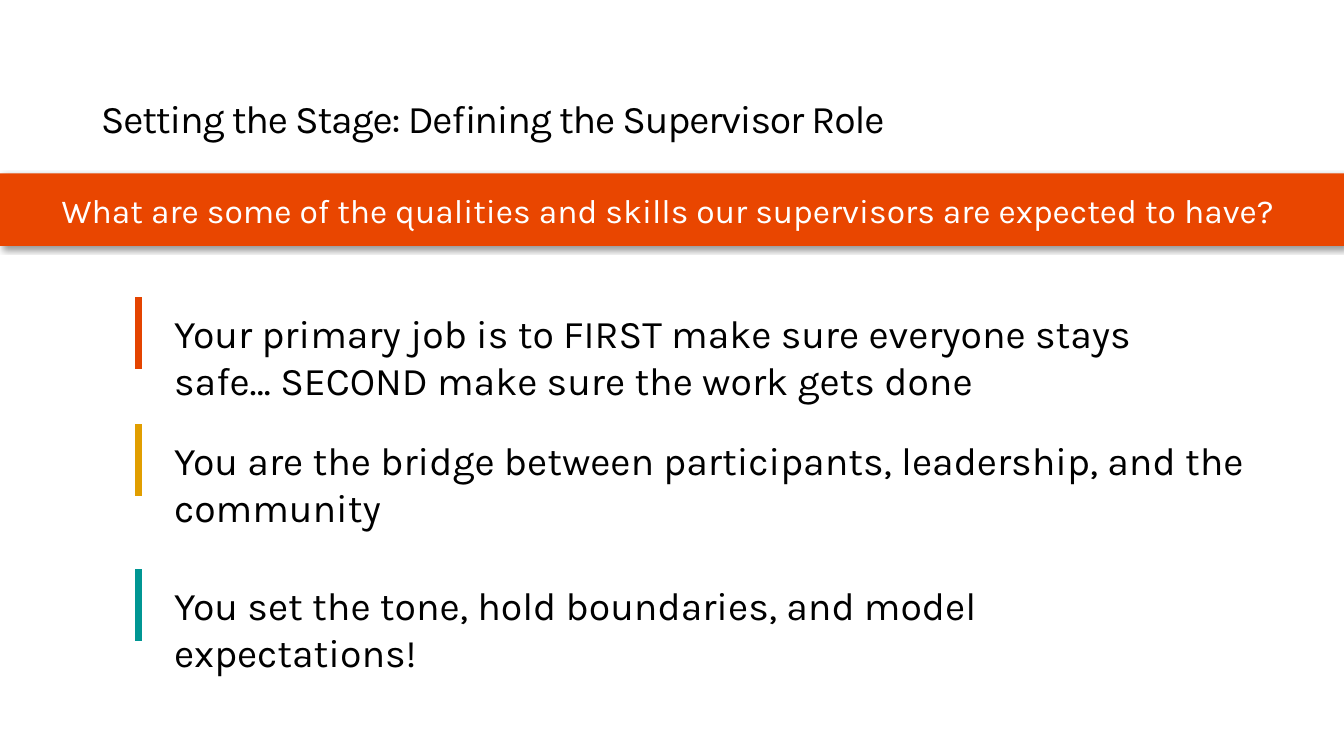
from lxml.etree import SubElement
from pptx import Presentation
from pptx.dml.color import RGBColor
from pptx.enum.shapes import MSO_CONNECTOR, MSO_SHAPE
from pptx.enum.text import MSO_ANCHOR, MSO_AUTO_SIZE, PP_ALIGN
from pptx.oxml.ns import qn
from pptx.util import Cm, Pt

COLORS = {
    "text": "000000",
    "shadow": "000000",
    "white": "FFFFFF",
    "banner": "E94600",
    "safety": "E44400",
    "bridge": "E19E00",
    "tone": "009693",
}
FONT = "Karla"
SLIDE_WIDTH, SLIDE_HEIGHT = Cm(33.87), Cm(19.05)
POINT_LEFT = Cm(3.5)
POINTS = [
    ("Your primary job is to FIRST make sure everyone stays safe… SECOND make sure the work gets done",
     "safety", Cm(7.49), Cm(26.14)),
    ("You are the bridge between participants, leadership, and the community",
     "bridge", Cm(10.69), Cm(28.71)),
    ("You set the tone, hold boundaries, and model expectations!",
     "tone", Cm(14.35), Cm(26.85)),
]


def color(name):
    return RGBColor.from_string(COLORS[name])


def write(frame, words, size, ink, align=PP_ALIGN.LEFT):
    frame.word_wrap = True
    line = frame.paragraphs[0]
    line.text = words
    line.alignment = align
    line.font.name = FONT
    line.font.size = Pt(size)
    line.font.color.rgb = color(ink)
    return line


def add_heading(slide, left, top, width, height):
    heading = slide.shapes.title
    heading.left, heading.top, heading.width, heading.height = left, top, width, height
    frame = heading.text_frame
    frame.auto_size = MSO_AUTO_SIZE.NONE
    frame.vertical_anchor = MSO_ANCHOR.BOTTOM
    frame.margin_left = frame.margin_right = frame.margin_bottom = 0
    frame.margin_top = Cm(0.13)
    line = write(frame, "Setting the Stage: Defining the Supervisor Role", 28, "text")
    line.line_spacing = 0.9
    line.runs[0]._r.get_or_add_rPr().set("spc", "-80")


def add_question_banner(slide, left, top, width, height):
    banner = slide.shapes.add_shape(MSO_SHAPE.RECTANGLE, left, top, width, height)
    banner.fill.solid()
    banner.fill.fore_color.rgb = color("banner")
    banner.line.fill.background()
    banner.shadow.inherit = False
    effects = banner._element.spPr.find(qn("a:effectLst"))
    shadow = SubElement(effects, qn("a:outerShdw"), blurRad=str(Pt(4)), dist=str(Pt(3)),
                        dir=str(45 * 60000), algn="tl", rotWithShape="0")
    tint = SubElement(shadow, qn("a:srgbClr"), val=COLORS["shadow"])
    SubElement(tint, qn("a:alpha"), val="40000")
    banner.text_frame.vertical_anchor = MSO_ANCHOR.MIDDLE
    write(banner.text_frame,
          "What are some of the qualities and skills our supervisors are expected to have? ",
          24, "white", PP_ALIGN.CENTER)


def add_point(slide, words, accent, left, top, width):
    point = slide.shapes.add_group_shape()
    indent, drop = Cm(0.64), Cm(0.18)
    statement = point.shapes.add_textbox(left + indent, top + drop, width - indent, Cm(2.64))
    write(statement.text_frame, words, 28, "text")
    bar = point.shapes.add_connector(MSO_CONNECTOR.STRAIGHT, left, top, left, top + Cm(1.8))
    bar.line.color.rgb = color(accent)
    bar.line.width = Pt(5)
    SubElement(bar._element.spPr, qn("a:effectLst"))


def main():
    deck = Presentation()
    deck.slide_width, deck.slide_height = SLIDE_WIDTH, SLIDE_HEIGHT
    slide = deck.slides.add_slide(deck.slide_layouts.get_by_name("Title Only"))
    add_heading(slide, Cm(2.54), Cm(1.93), Cm(28.78), Cm(1.65))
    add_question_banner(slide, 0, Cm(4.37), SLIDE_WIDTH, Cm(1.83))
    for words, accent, top, width in POINTS:
        add_point(slide, words, accent, POINT_LEFT, top, width)
    deck.save("out.pptx")


if __name__ == "__main__":
    main()
